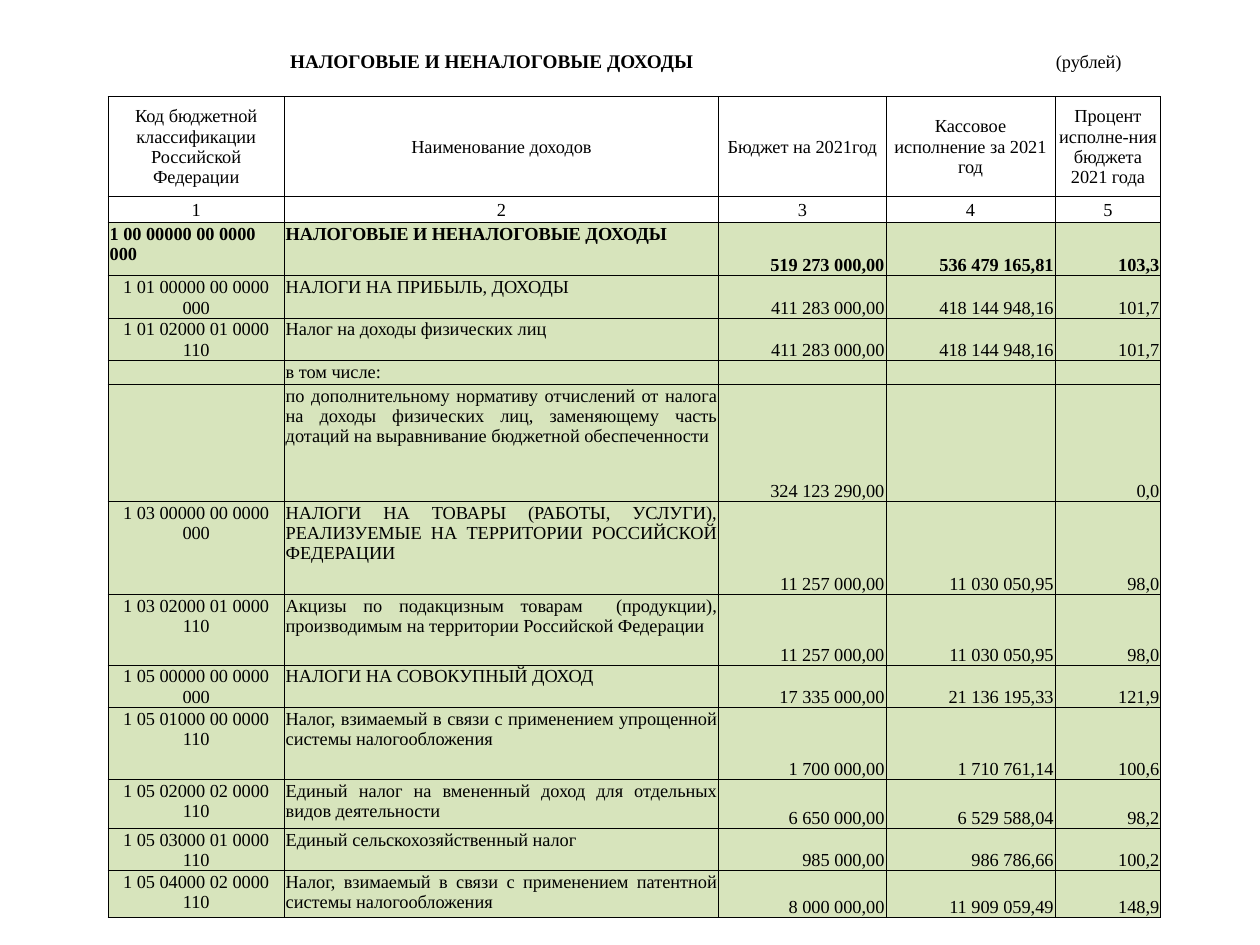
import pptx
import pptx.util
import pptx.dml.color
import pptx.enum.text
import pptx.oxml
import pptx.oxml.ns

Cm = pptx.util.Cm
Pt = pptx.util.Pt
ALIGN = pptx.enum.text.PP_ALIGN
ANCHOR = pptx.enum.text.MSO_ANCHOR

CELL = {"margin_left": Cm(0.03), "margin_right": Cm(0.03),
        "margin_top": Cm(0.03), "margin_bottom": 0}
COLS = [3.55, 8.76, 3.37, 3.41, 2.13]
ROWS = [0.48, 0.46, 2, 0.54, 1.07, 0.58, 0.71, 0.48, 2.36, 1.88, 1.42,
        0.69, 1.45, 0.99, 0.64, 0.94]
HEADER = ["Код бюджетной классификации Российской Федерации",
          "Наименование доходов", "Бюджет на 2021год",
          "Кассовое исполнение за 2021 год",
          "Процент исполне-ния бюджета 2021 года"]
INCOME = [
    ["1 00 00000 00 0000 000", "НАЛОГОВЫЕ И НЕНАЛОГОВЫЕ ДОХОДЫ",
     "519 273 000,00", "536 479 165,81", "103,3"],
    ["1 01 00000 00 0000 000", "НАЛОГИ НА ПРИБЫЛЬ, ДОХОДЫ",
     "411 283 000,00", "418 144 948,16", "101,7"],
    ["1 01 02000 01 0000 110", "Налог на доходы физических лиц",
     "411 283 000,00", "418 144 948,16", "101,7"],
    ["", "в том числе:", "", "", ""],
    ["", "по дополнительному нормативу отчислений от налога на доходы "
     "физических лиц, заменяющему часть дотаций на выравнивание бюджетной "
     "обеспеченности", "324 123 290,00", "", "0,0"],
    ["1 03 00000 00 0000 000", "НАЛОГИ НА ТОВАРЫ (РАБОТЫ, УСЛУГИ), "
     "РЕАЛИЗУЕМЫЕ НА ТЕРРИТОРИИ РОССИЙСКОЙ ФЕДЕРАЦИИ",
     "11 257 000,00", "11 030 050,95", "98,0"],
    ["1 03 02000 01 0000 110", "Акцизы по подакцизным товарам  (продукции), "
     "производимым на территории Российской Федерации",
     "11 257 000,00", "11 030 050,95", "98,0"],
    ["1 05 00000 00 0000 000", "НАЛОГИ НА СОВОКУПНЫЙ ДОХОД",
     "17 335 000,00", "21 136 195,33", "121,9"],
    ["1 05 01000 00 0000 110", "Налог, взимаемый в связи с применением "
     "упрощенной системы налогообложения",
     "1 700 000,00", "1 710 761,14", "100,6"],
    ["1 05 02000 02 0000 110", "Единый налог на вмененный доход для "
     "отдельных видов деятельности", "6 650 000,00", "6 529 588,04", "98,2"],
    ["1 05 03000 01 0000 110", "Единый сельскохозяйственный налог",
     "985 000,00", "986 786,66", "100,2"],
    ["1 05 04000 02 0000 110", "Налог, взимаемый в связи с применением "
     "патентной системы налогообложения",
     "8 000 000,00", "11 909 059,49", "148,9"],
]


def rgb(value):
    return pptx.dml.color.RGBColor.from_string(value)


def apply(obj, values):
    for name, value in values.items():
        setattr(obj, name, value)


class Deck:
    font = {"name": "Times New Roman", "size": Pt(10.5), "bold": False}
    ink, paper, green = "000000", "FFFFFF", "D7E4BC"

    def __init__(self, prs):
        self.s = prs.slides.add_slide(prs.slide_layouts[6])

    def table(self, left, top, cols, rows):
        frame = self.s.shapes.add_table(len(rows), len(cols), Cm(left), Cm(top),
                                        Cm(sum(cols)), Cm(sum(rows)))
        tbl = frame.table
        apply(tbl, {"first_row": False, "horz_banding": False})
        for col, width in zip(tbl.columns, cols):
            col.width = Cm(width)
        for row, height in zip(tbl.rows, rows):
            row.height = Cm(height)
        return tbl

    def border(self, cell, sides):
        tcPr = cell._tc.get_or_add_tcPr()
        ns = pptx.oxml.ns.nsdecls("a")
        solid = f'<a:solidFill><a:srgbClr val="{self.ink}"/></a:solidFill>'
        for side in "LRTB":
            line = solid if side in sides else "<a:noFill/>"
            tcPr.append(pptx.oxml.parse_xml(
                f'<a:ln{side} {ns} w="{Pt(0.5)}">{line}</a:ln{side}>'))

    def cell(self, cell, text="", fill=paper, sides="LRTB", align=ALIGN.LEFT,
             anchor=ANCHOR.TOP, font={}, margins={}):
        self.border(cell, sides)
        cell.fill.solid()
        cell.fill.fore_color.rgb = rgb(fill)
        apply(cell, {**CELL, "vertical_anchor": anchor, **margins})
        p = cell.text_frame.paragraphs[0]
        p.alignment = align
        if text:
            r = p.add_run()
            r.text = text
            apply(r.font, {**self.font, **font})
            r.font.color.rgb = rgb(self.ink)
        else:
            p._p.get_or_add_endParaRPr().set("sz", "1050")


def main():
    prs = pptx.Presentation()
    apply(prs, {"slide_width": Cm(25.4), "slide_height": Cm(19.05)})
    deck = Deck(prs)
    tbl = deck.table(2.18, 0.99, COLS, ROWS)

    caption = {
        1: {"text": "НАЛОГОВЫЕ И НЕНАЛОГОВЫЕ ДОХОДЫ",
            "font": {"size": Pt(11), "bold": True},
            "margins": {"margin_left": Cm(0.12)}},
        3: {"text": "(рублей)", "align": ALIGN.RIGHT,
            "margins": {"margin_right": Cm(0.79)}},
    }
    tbl.cell(0, 3).merge(tbl.cell(0, 4))
    for j in range(len(COLS)):
        deck.cell(tbl.cell(0, j), sides="", anchor=ANCHOR.BOTTOM,
                  **caption.get(j, {}))
        deck.cell(tbl.cell(1, j), sides="B")

    numbers = [str(j + 1) for j in range(len(COLS))]
    for i, row in enumerate([HEADER, numbers], 2):
        for j, text in enumerate(row):
            deck.cell(tbl.cell(i, j), text, align=ALIGN.CENTER,
                      anchor=ANCHOR.MIDDLE)

    aligns = [ALIGN.CENTER, ALIGN.JUSTIFY] + [ALIGN.RIGHT] * 3
    for i, row in enumerate(INCOME):
        total = i == 0
        for j, text in enumerate(row):
            deck.cell(tbl.cell(i + 4, j), text, deck.green,
                      align=ALIGN.LEFT if total and j == 0 else aligns[j],
                      anchor=ANCHOR.BOTTOM if j > 1 else ANCHOR.TOP,
                      font={"bold": total})

    prs.save("out.pptx")


if __name__ == "__main__":
    main()
